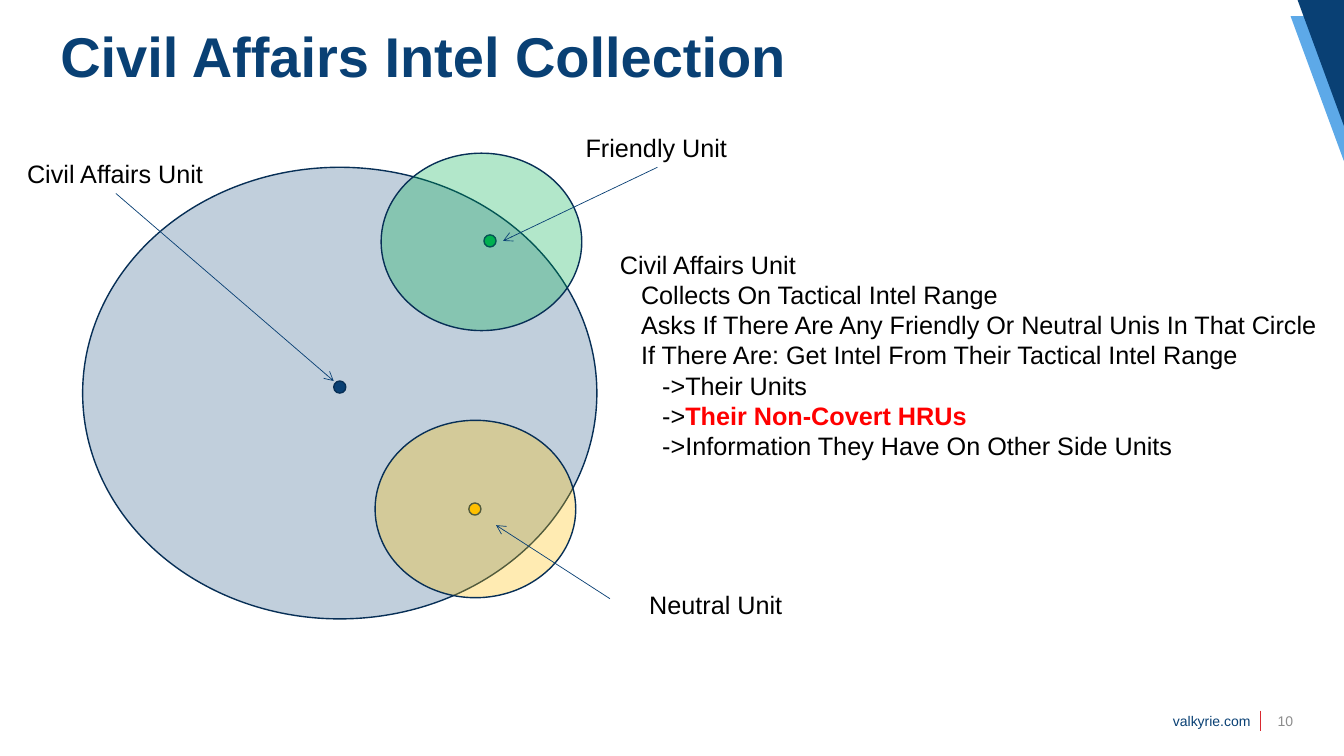
from lxml.etree import SubElement
from pptx import Presentation
from pptx.dml.color import RGBColor
from pptx.enum.shapes import MSO_CONNECTOR as Connector, MSO_SHAPE as Shape
from pptx.enum.text import MSO_ANCHOR as Anchor, MSO_AUTO_SIZE as AutoSize, PP_ALIGN as Align
from pptx.oxml.ns import qn
from pptx.util import Pt

PX = 9144
FONT = "Arial"
NAVY, OUTLINE, SKY = "094074", "072F56", "5DA9E8"
GREEN, AMBER, RED = "00B050", "FFC000", "FF0000"
BLACK, GRAY, CRIMSON = "000000", "8C8C8C", "D9282F"


def color(hex_string):
    """Turn a hex string into a colour."""
    return RGBColor.from_string(hex_string)


def px(*lengths):
    """Turn pixel lengths into EMU."""
    return [length * PX for length in lengths]


def style(font, size, hex_string, bold=False):
    """Set the face, size, colour and weight of a font."""
    font.name, font.size, font.bold = FONT, Pt(size), bold
    font.color.rgb = color(hex_string)


def add_text(slide, box, text, size, hex_string=BLACK, bold=False,
             align=Align.LEFT, anchor=Anchor.TOP, wrap=True):
    """Add a text box with one style and return it."""
    shape = slide.shapes.add_textbox(*px(*box))
    frame = shape.text_frame
    frame.word_wrap, frame.vertical_anchor = wrap, anchor
    frame.auto_size = AutoSize.NONE if wrap else AutoSize.SHAPE_TO_FIT_TEXT
    frame.text = text
    for paragraph in frame.paragraphs:
        paragraph.alignment = align
        for run in paragraph.runs:
            style(run.font, size, hex_string, bold)
    return shape


def add_line(slide, start, end, hex_string, width, arrow=False):
    """Add a straight line, with an open arrowhead at its end if asked."""
    line = slide.shapes.add_connector(Connector.STRAIGHT, *px(*start, *end))
    line.line.color.rgb = color(hex_string)
    line.line.width = Pt(width)
    if arrow:
        SubElement(line.line._get_or_add_ln(), qn("a:tailEnd"), type="arrow")
    SubElement(line._element.spPr, qn("a:effectLst"))
    return line


def add_circle(slide, box, hex_string, opacity=100):
    """Add an outlined ellipse with the given opacity in percent."""
    circle = slide.shapes.add_shape(Shape.OVAL, *px(*box))
    circle.shadow.inherit = False
    circle.fill.solid()
    circle.fill.fore_color.rgb = color(hex_string)
    circle.line.color.rgb = color(OUTLINE)
    circle.line.width = Pt(1)
    if opacity < 100:
        fill_color = circle._element.spPr.find(qn("a:solidFill"))[0]
        SubElement(fill_color, qn("a:alpha"), val=str(opacity * 1000))


def add_corner(slide, left, top):
    """Draw the two slanted bands in the top right corner."""
    bands = [(SKY, [(53, 16), (0, 16), (53, 160), (53, 125)]),
             (NAVY, [(53, 0), (7, 0), (53, 125)])]
    for hex_string, points in bands:
        points = [(left + x, top + y) for x, y in points]
        builder = slide.shapes.build_freeform(*points[0], scale=PX)
        builder.add_line_segments(points[1:])
        band = builder.convert_to_shape()
        band.shadow.inherit = False
        band.fill.solid()
        band.fill.fore_color.rgb = color(hex_string)
        band.line.fill.background()


def add_footer(slide, left, top):
    """Add the web address, the divider and the slide number."""
    divider = left + 119
    add_text(slide, (left, top + 7, 119, 27), "valkyrie.com", 10, NAVY,
             align=Align.RIGHT, anchor=Anchor.MIDDLE)
    add_line(slide, (divider, top + 10), (divider, top + 30), CRIMSON, 1)
    add_text(slide, (divider, top, 50, 40), "10", 10, GRAY,
             align=Align.CENTER, anchor=Anchor.MIDDLE)


def add_title(slide, box):
    """Add the slide title."""
    title = add_text(slide, box, "Civil Affairs Intel Collection", 40, NAVY,
                     bold=True, anchor=Anchor.MIDDLE)
    title.text_frame.paragraphs[0].line_spacing = 0.9


def add_range_diagram(slide, left, top):
    """Draw the intel ranges, their units and the labels with arrows."""
    circles = [
        (65, 40, 510, 448, NAVY, 25),
        (314, 252, 12, 12, NAVY, 100),
        (448, 373, 12, 12, AMBER, 100),
        (463, 107, 12, 12, GREEN, 100),
        (361, 26, 199, 176, GREEN, 30),
        (355, 291, 199, 176, AMBER, 30),
    ]
    for x, y, width, height, hex_string, opacity in circles:
        add_circle(slide, (left + x, top + y, width, height), hex_string, opacity)

    labels = [
        ("Civil Affairs Unit", (0, 26, 196), (98, 66), (314, 252), True),
        ("Friendly Unit", (554, 0, 162), (635, 40), (482, 113), True),
        ("Neutral Unit", (617, 454, 255), (588, 468), (475, 395), False),
    ]
    for text, (x, y, width), start, end, joined in labels:
        label = add_text(slide, (left + x, top + y, width, 40), text, 18, wrap=not joined)
        arrow = add_line(slide, (left + start[0], top + start[1]),
                         (left + end[0], top + end[1]), NAVY, 0.5, arrow=True)
        if joined:
            arrow.begin_connect(label, 2)


def add_rules(slide, box):
    """List the collection rules, indented by level."""
    rules = [
        (0, "Civil Affairs Unit"),
        (1, "Collects On Tactical Intel Range"),
        (1, "Asks If There Are Any Friendly Or Neutral Unis In That Circle"),
        (1, "If There Are: Get Intel From Their Tactical Intel Range"),
        (2, "->Their Units"),
        (2, "->"),
        (2, "->Information They Have On Other Side Units"),
    ]
    text = "\n".join(rule for _, rule in rules)
    shape = add_text(slide, box, text, 18, wrap=False)
    paragraphs = shape.text_frame.paragraphs
    for paragraph, (level, _) in zip(paragraphs, rules):
        paragraph._p.get_or_add_pPr().set("marL", str(level * 21 * PX))
    highlight = paragraphs[5].add_run()
    highlight.text = "Their Non-Covert HRUs"
    style(highlight.font, 18, RED, bold=True)


def main():
    """Build the slide and save it."""
    presentation = Presentation()
    presentation.slide_width, presentation.slide_height = px(1333, 750)
    slide = presentation.slides.add_slide(presentation.slide_layouts[6])
    add_corner(slide, 1280, 0)
    add_footer(slide, 1131, 695)
    add_title(slide, (50, 13, 1150, 92))
    add_range_diagram(slide, 17, 126)
    add_rules(slide, (605, 242, 716, 222))
    presentation.save("out.pptx")


if __name__ == "__main__":
    main()
